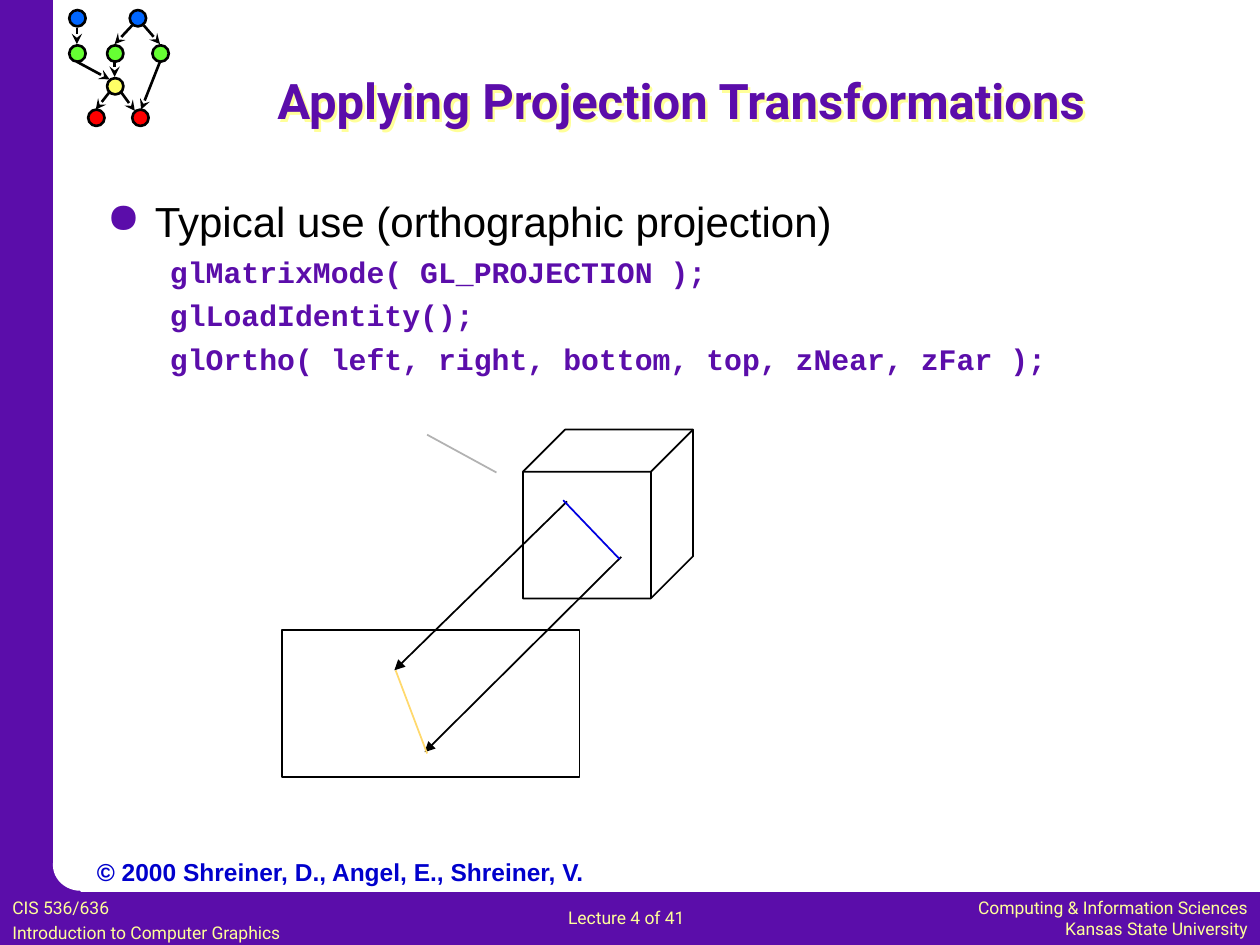
from lxml import etree
from pptx import Presentation
from pptx import util as u
from pptx.dml.color import RGBColor
from pptx.enum import shapes, text
from pptx.oxml.ns import qn

PURPLE, CREAM, BLACK, WHITE = "5B0DAA", "FFFF99", "000000", "FFFFFF"
GREEN, BLUE, YELLOW, RED = "66FF33", "0066FF", "FFFF66", "FF0000"
SHAPE, ALIGN = shapes.MSO_SHAPE, text.PP_ALIGN

# Content
title = "Applying Projection Transformations"
heading = "Typical use (orthographic projection)"
code = ["glMatrixMode( GL_PROJECTION );",
        "glLoadIdentity();",
        "glOrtho( left, right, bottom, top, zNear, zFar );"]
copyright_line = "© 2000 Shreiner, D., Angel, E., Shreiner, V."
footers = [  # lines, box, alignment, space before
    (["Computing & Information Sciences", "Kansas State University"],
     (7.18, 7.07, 2.82, 0.43), ALIGN.RIGHT, 0),
    (["CIS 536/636", "Introduction to Computer Graphics"],
     (0, 7.07, 2.95, 0.44), ALIGN.LEFT, 2),
    (["Lecture 4 of 41"], (4.41, 7.15, 1.42, 0.27), ALIGN.LEFT, 0),
]
frame = [  # purple side and bottom bands with a rounded inner corner
    (SHAPE.RECTANGLE, (0, 7.08, 10, 0.42), PURPLE),
    (SHAPE.RECTANGLE, (0, 0, 0.42, 7.5), PURPLE),
    (SHAPE.RECTANGLE, (0.2, 6.85, 0.44, 0.44), PURPLE),
    (SHAPE.OVAL, (0.42, 6.66, 0.44, 0.41), WHITE),
]
NODE = 0.13
graph_nodes = [  # left, top, colour
    (0.55, 0.36, GREEN), (0.55, 0.08, BLUE), (0.85, 0.36, GREEN),
    (1.03, 0.08, BLUE), (1.21, 0.36, GREEN), (0.85, 0.62, YELLOW),
    (0.7, 0.87, RED), (1.05, 0.87, RED),
]
graph_edges = [
    (0.61, 0.22, 0.61, 0.35), (1.05, 0.2, 0.91, 0.35),
    (1.14, 0.2, 1.27, 0.35), (0.61, 0.49, 0.87, 0.63),
    (0.91, 0.49, 0.91, 0.61), (1.27, 0.49, 1.12, 0.87),
    (0.96, 0.73, 1.07, 0.88), (0.87, 0.73, 0.76, 0.87),
]
projection_lines = [  # ends, colour, arrowhead
    ((4.93, 4.42, 3.37, 5.97), BLACK, "triangle"),
    ((4.5, 3.98, 3.13, 5.32), BLACK, "triangle"),
    ((4.47, 3.97, 4.92, 4.44), "0000E0", None),
    ((3.14, 5.32, 3.39, 5.98), "FFD96D", None),
    ((3.39, 3.45, 3.94, 3.75), "B2B2B2", None),
]

prs = Presentation()
prs.slide_width, prs.slide_height = u.Inches(10), u.Inches(7.5)
slide = prs.slides.add_slide(prs.slide_layouts[6])


def rgb(color):
    return RGBColor.from_string(color)


def inches(values):
    return [u.Inches(v) for v in values]


def add_figure(kind, box, fill=None, outline=0):
    figure = slide.shapes.add_shape(kind, *inches(box))
    figure.shadow.inherit = False
    if fill:
        figure.fill.solid()
        figure.fill.fore_color.rgb = rgb(fill)
    else:
        figure.fill.background()
    if outline:
        figure.line.color.rgb = rgb(BLACK)
        figure.line.width = u.Pt(outline)
    else:
        figure.line.fill.background()
    return figure


def add_line(ends, color, width, head=None):
    line = slide.shapes.add_connector(shapes.MSO_CONNECTOR.STRAIGHT, *inches(ends))
    line.line.color.rgb = rgb(color)
    line.line.width = u.Pt(width)
    if head:
        etree.SubElement(line.line._get_or_add_ln(), qn("a:tailEnd"), type=head)
    etree.SubElement(line._element.spPr, qn("a:effectLst"))


def add_box(box, anchor=text.MSO_ANCHOR.TOP):
    area = slide.shapes.add_textbox(*inches(box))
    area.text_frame.word_wrap = True
    area.text_frame.vertical_anchor = anchor
    return area


def add_paragraph(area, words, size, font, color, bold=False,
                  align=ALIGN.LEFT, before=0, indent=None, bullet=None):
    frame_text = area.text_frame
    first = not frame_text.paragraphs[0].runs
    para = frame_text.paragraphs[0] if first else frame_text.add_paragraph()
    para.alignment = align
    para.space_before = u.Pt(0 if first else before)
    if indent:
        props = para._p.get_or_add_pPr()
        margin, hang = inches(indent)
        props.set("marL", str(margin))
        props.set("indent", str(hang))
        if bullet:
            tint = etree.SubElement(props, qn("a:buClr"))
            etree.SubElement(tint, qn("a:srgbClr"), val=PURPLE)
            etree.SubElement(props, qn("a:buChar"), char=bullet)
        else:
            etree.SubElement(props, qn("a:buNone"))
    run = para.add_run()
    run.text = words
    run.font.size, run.font.name, run.font.bold = u.Pt(size), font, bold
    run.font.color.rgb = rgb(color)


# Frame
for kind, box, fill in frame:
    add_figure(kind, box, fill)

# Corner graph
for left, top, fill in graph_nodes:
    add_figure(SHAPE.OVAL, (left, top, NODE, NODE), fill, 1.5)
for ends in graph_edges:
    add_line(ends, BLACK, 1.5, "stealth")

# Footers
for lines, box, align, before in footers:
    footer = add_box(box)
    for words in lines:
        add_paragraph(footer, words, 10, "Roboto", CREAM, align=align, before=before)

# Title with a cream shadow behind the letters
title_box = add_box((1.42, 0.08, 7.97, 1), text.MSO_ANCHOR.BOTTOM)
add_paragraph(title_box, title, 28, "Roboto", PURPLE, True, ALIGN.CENTER)
effects = etree.SubElement(title_box._element.spPr, qn("a:effectLst"))
shadow = etree.SubElement(effects, qn("a:outerShdw"), dist="25400", dir="2700000")
etree.SubElement(shadow, qn("a:srgbClr"), val=CREAM)

# Projection drawing: screen, cube, projectors and edges
add_figure(SHAPE.RECTANGLE, (2.24, 5, 2.36, 1.17), WHITE, 1)
cube = add_figure(SHAPE.CUBE, (4.15, 3.41, 1.35, 1.34), outline=1)
cube.adjustments[0] = 0.25
for ends, color, head in projection_lines:
    add_line(ends, color, 1, head)

# Copyright
add_paragraph(add_box((0.67, 6.75, 4.3, 0.33)), copyright_line, 14, "Arial", "0000CC", True)

# Body
body = add_box((0.75, 1.5, 8.69, 5.17))
add_paragraph(body, heading, 24, "Arial", BLACK, indent=(0.38, -0.38), bullet="●")
for statement in code:
    add_paragraph(body, statement, 17, "Courier New", PURPLE, True,
                  before=4.5, indent=(0.81, -0.31))

prs.save("out.pptx")
